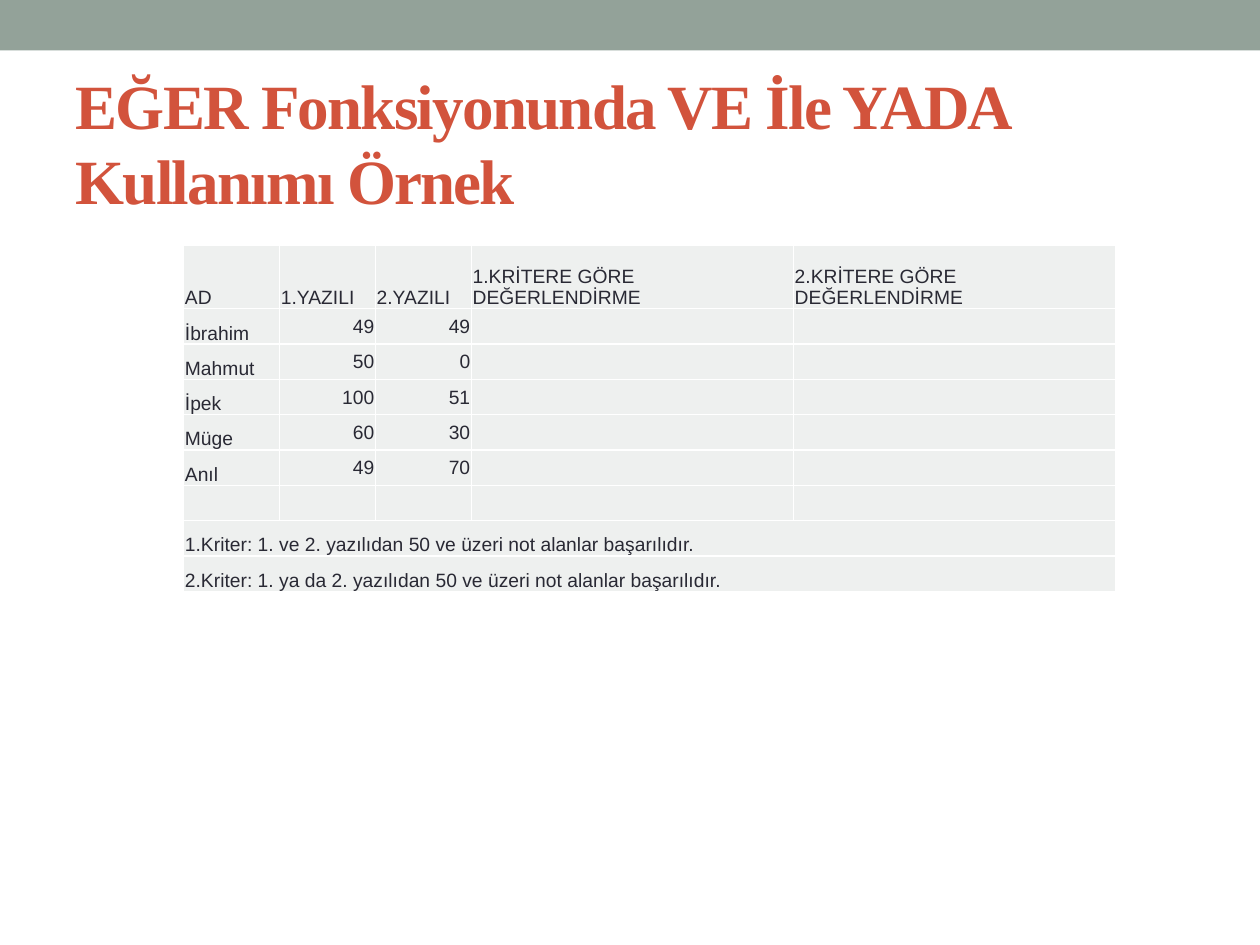
from lxml import etree
from pptx import Presentation
from pptx.dml.color import RGBColor
from pptx.enum.shapes import MSO_SHAPE
from pptx.enum.text import MSO_ANCHOR, MSO_AUTO_SIZE, PP_ALIGN
from pptx.oxml.ns import qn
from pptx.util import Pt

RECTANGLE = MSO_SHAPE.RECTANGLE
MIDDLE, BOTTOM = MSO_ANCHOR.MIDDLE, MSO_ANCHOR.BOTTOM
LEFT, RIGHT = PP_ALIGN.LEFT, PP_ALIGN.RIGHT
NO_AUTOFIT = MSO_AUTO_SIZE.NONE

SAGE = RGBColor(0x93, 0xA2, 0x99)
BRICK = RGBColor(0xD2, 0x53, 0x3C)
INK = RGBColor(0x29, 0x29, 0x34)
PALE = RGBColor(0xEE, 0xF0, 0xEF)
WHITE = RGBColor(0xFF, 0xFF, 0xFF)

HEADINGS = ["AD", "1.YAZILI", "2.YAZILI",
            "1.KRİTERE GÖRE DEĞERLENDİRME", "2.KRİTERE GÖRE DEĞERLENDİRME"]
GRADES = [("İbrahim", 49, 49), ("Mahmut", 50, 0), ("İpek", 100, 51),
          ("Müge", 60, 30), ("Anıl", 49, 70)]
CRITERIA = ["1.Kriter: 1. ve 2. yazılıdan 50 ve üzeri not alanlar başarılıdır.",
            "2.Kriter: 1. ya da 2. yazılıdan 50 ve üzeri not alanlar başarılıdır."]


class SlideBuilder:
    title_font, title_size = "Times New Roman", 36
    body_font, body_size = "Arial", 11

    def __init__(self, slide):
        self.slide = slide

    def band(self, left, top, width, height, color):
        band = self.slide.shapes.add_shape(
            RECTANGLE, Pt(left), Pt(top), Pt(width), Pt(height))
        band.shadow.inherit = False
        band.fill.solid()
        band.fill.fore_color.rgb = color
        band.line.fill.background()

    def run(self, paragraph, text, font, size, color, bold=False):
        run = paragraph.add_run()
        run.text = text
        run.font.name = font
        run.font.size = Pt(size)
        run.font.bold = bold
        run.font.color.rgb = color
        return run

    def title(self, text, left, top, width, height):
        title = self.slide.shapes.title
        title.left, title.top = Pt(left), Pt(top)
        title.width, title.height = Pt(width), Pt(height)
        frame = title.text_frame
        frame.word_wrap = True
        frame.auto_size = NO_AUTOFIT
        frame.vertical_anchor = MIDDLE
        paragraph = frame.paragraphs[0]
        paragraph.alignment = LEFT
        run = self.run(paragraph, text, self.title_font, self.title_size, BRICK, True)
        run.font._element.set("spc", "-100")

    def borders(self, cell):
        properties = cell._tc.get_or_add_tcPr()
        for position, side in enumerate(("lnL", "lnR", "lnT", "lnB")):
            line = etree.Element(qn(f"a:{side}"), w=str(Pt(1)))
            fill = etree.SubElement(line, qn("a:solidFill"))
            etree.SubElement(fill, qn("a:srgbClr"), val=str(WHITE))
            properties.insert(position, line)

    def cell(self, cell, value):
        cell.fill.solid()
        cell.fill.fore_color.rgb = PALE
        self.borders(cell)
        cell.margin_left = cell.margin_right = cell.margin_top = Pt(0.7)
        cell.margin_bottom = 0
        is_grade = isinstance(value, int)
        cell.vertical_anchor = MIDDLE if is_grade else BOTTOM
        paragraph = cell.text_frame.paragraphs[0]
        paragraph.alignment = RIGHT if is_grade else LEFT
        if value == "":
            end = etree.SubElement(paragraph._p, qn("a:endParaRPr"))
            end.set("sz", str(self.body_size * 100))
        else:
            self.run(paragraph, str(value), self.body_font, self.body_size, INK)

    def table(self, rows, left, top, widths, heights, merged_rows):
        table = self.slide.shapes.add_table(
            len(rows), len(widths), Pt(left), Pt(top),
            Pt(sum(widths)), Pt(sum(heights))).table
        table.first_row = table.horz_banding = False
        for column, width in zip(table.columns, widths):
            column.width = Pt(width)
        for row, height in zip(table.rows, heights):
            row.height = Pt(height)
        for r, values in enumerate(rows):
            for c, value in enumerate(values):
                self.cell(table.cell(r, c), value)
        for r in merged_rows:
            table.cell(r, 0).merge(table.cell(r, len(widths) - 1))


def main():
    presentation = Presentation()
    presentation.slide_width, presentation.slide_height = Pt(720), Pt(540)
    builder = SlideBuilder(
        presentation.slides.add_slide(presentation.slide_layouts[5]))
    builder.band(0, 0, 720, 28.8, SAGE)
    builder.title("EĞER Fonksiyonunda VE İle YADA Kullanımı Örnek", 36, 42, 648, 78)

    rows = [HEADINGS]
    rows += [[*grade, "", ""] for grade in GRADES]
    rows.append([""] * len(HEADINGS))
    first_criterion = len(rows)
    rows += [[criterion, "", "", "", ""] for criterion in CRITERIA]
    builder.table(rows, 105, 140, [54.8] * 3 + [184.1] * 2,
                  [36.4] + [20.2] * (len(rows) - 1),
                  range(first_criterion, len(rows)))
    presentation.save("out.pptx")


if __name__ == "__main__":
    main()
